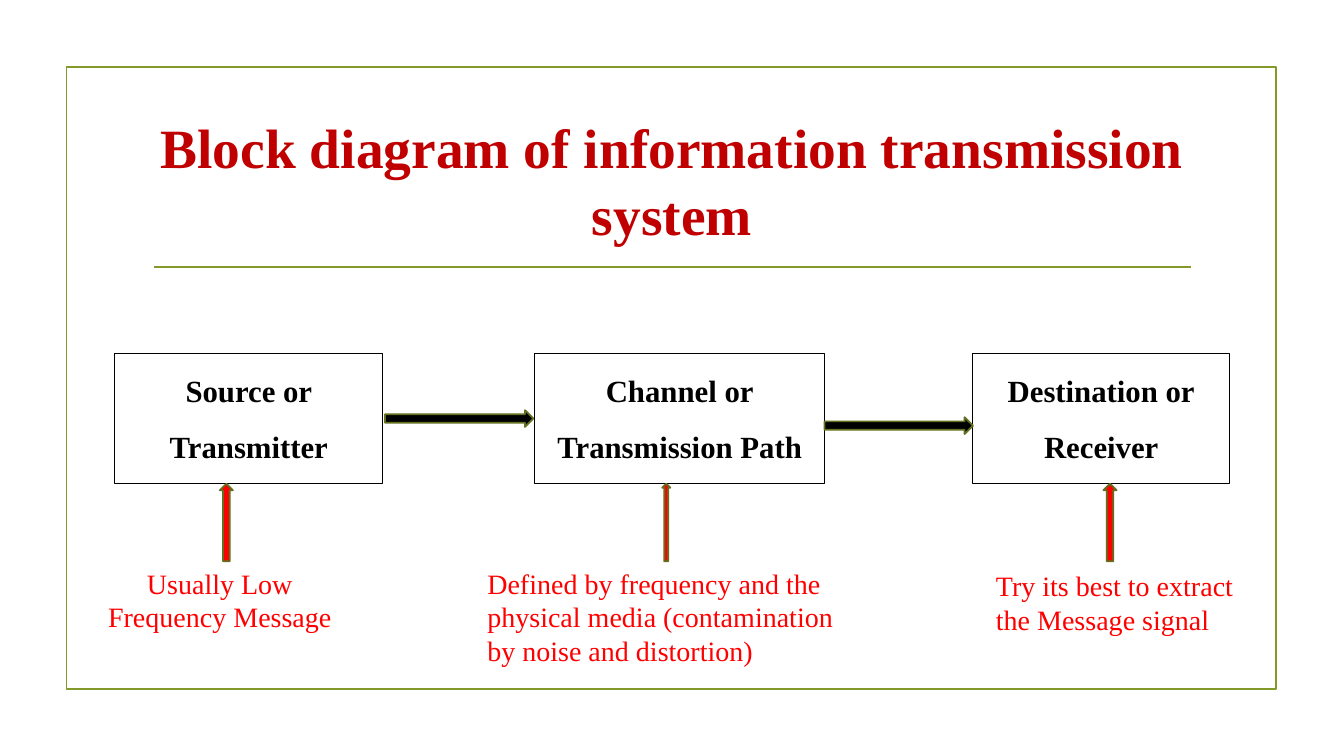
from dataclasses import dataclass

import pptx
import pptx.dml.color
import pptx.enum.shapes
import pptx.enum.text
import pptx.oxml
import pptx.oxml.ns
import pptx.util

Pt = pptx.util.Pt
Shapes = pptx.enum.shapes.MSO_SHAPE
Align = pptx.enum.text.PP_ALIGN
Anchor = pptx.enum.text.MSO_ANCHOR


@dataclass(frozen=True)
class Theme:
    font: str = "Times New Roman"
    title: str = "C00000"
    frame: str = "83992A"
    arrow_edge: str = "61711F"
    ink: str = "000000"
    accent: str = "FF0000"
    title_size: float = 39.6
    block_size: float = 22
    note_size: float = 20
    rule: float = 1.25
    thin: float = 0.5


@dataclass(frozen=True)
class Area:
    left: float
    top: float
    width: float
    height: float

    def lengths(self) -> tuple:
        return Pt(self.left), Pt(self.top), Pt(self.width), Pt(self.height)


@dataclass(frozen=True)
class Block:
    left: float
    width: float
    lines: tuple[str, str]


@dataclass(frozen=True)
class Arrow:
    preset: Shapes
    area: Area
    fill: str


@dataclass(frozen=True)
class Note:
    area: Area
    text: str
    align: Align = Align.LEFT
    inset_left: float = 7.2
    inset_right: float = 7.2


THEME = Theme()
BLOCK_TOP, BLOCK_HEIGHT = 252.5, 93
UP_TOP, UP_HEIGHT = BLOCK_TOP + BLOCK_HEIGHT, 55.5

FRAME = Area(47.5, 48, 864, 444)
TITLE = Area(102, 77, 756, 103)

BLOCKS = [
    Block(82, 191.5, ("Source or", "Transmitter")),
    Block(382, 207, ("Channel or", "Transmission Path")),
    Block(694.8, 183.6, ("Destination or", "Receiver")),
]

ARROWS = [
    Arrow(Shapes.RIGHT_ARROW, Area(275, 293, 106, 12), THEME.ink),
    Arrow(Shapes.RIGHT_ARROW, Area(589, 298, 106, 12), THEME.ink),
    Arrow(Shapes.UP_ARROW, Area(157, UP_TOP, 9.4, UP_HEIGHT), THEME.accent),
    Arrow(Shapes.UP_ARROW, Area(473, UP_TOP, 5.8, UP_HEIGHT), THEME.accent),
    Arrow(Shapes.UP_ARROW, Area(788.2, UP_TOP, 9.4, UP_HEIGHT), THEME.accent),
]

NOTES = [
    Note(Area(61, 401, 192, 78), "Usually Low Frequency Message", Align.CENTER),
    Note(
        Area(341, 401, 264, 80),
        "Defined by frequency and the physical media "
        "(contamination by noise and distortion)",
    ),
    Note(
        Area(694.8, 402.5, 236, 55.5),
        "Try its best to extract the Message signal",
        inset_left=16.6,
        inset_right=36,
    ),
]


def color(code: str) -> pptx.dml.color.RGBColor:
    return pptx.dml.color.RGBColor.from_string(code)


def add_span(para, text: str, size: float, code: str, bold: bool = False) -> None:
    span = para.add_run()
    span.text = text
    span.font.name = THEME.font
    span.font.size = Pt(size)
    span.font.bold = bold
    span.font.color.rgb = color(code)


def add_outline(page, preset: Shapes, area: Area, edge: str, weight: float, fill: str | None = None):
    """Add a preset shape, hollow unless a fill is given."""
    shape = page.shapes.add_shape(preset, *area.lengths())
    shape.shadow.inherit = False
    if fill:
        shape.fill.solid()
        shape.fill.fore_color.rgb = color(fill)
    else:
        shape.fill.background()
    shape.line.color.rgb = color(edge)
    shape.line.width = Pt(weight)
    return shape


def add_divider(page) -> None:
    line = page.shapes.add_connector(
        pptx.enum.shapes.MSO_CONNECTOR.STRAIGHT, Pt(110), Pt(190.8), Pt(850.5), Pt(190.8)
    )
    line.line.color.rgb = color(THEME.frame)
    line.line.width = Pt(THEME.rule)
    properties = line.element.find(pptx.oxml.ns.qn("p:spPr"))
    properties.append(pptx.oxml.parse_xml(f"<a:effectLst {pptx.oxml.ns.nsdecls('a')}/>"))


def fill_title(page) -> None:
    title = page.shapes.title
    title.left, title.top, title.width, title.height = TITLE.lengths()
    frame = title.text_frame
    frame.word_wrap = True
    frame.auto_size = pptx.enum.text.MSO_AUTO_SIZE.NONE
    frame.vertical_anchor = Anchor.MIDDLE
    para = frame.paragraphs[0]
    para.alignment = Align.CENTER
    text = "Block diagram of information transmission system"
    add_span(para, text, THEME.title_size, THEME.title, bold=True)


def add_block(page, block: Block) -> None:
    area = Area(block.left, BLOCK_TOP, block.width, BLOCK_HEIGHT)
    box = add_outline(page, Shapes.RECTANGLE, area, THEME.ink, THEME.thin)
    frame = box.text_frame
    frame.word_wrap = True
    frame.vertical_anchor = Anchor.TOP
    frame.margin_left = frame.margin_right = frame.margin_top = frame.margin_bottom = 0
    for index, text in enumerate(block.lines):
        para = frame.add_paragraph() if index else frame.paragraphs[0]
        para.alignment = Align.CENTER
        para.line_spacing = 1.5
        add_span(para, text, THEME.block_size, THEME.ink, bold=True)


def add_note(page, note: Note) -> None:
    frame = page.shapes.add_textbox(*note.area.lengths()).text_frame
    frame.word_wrap = True
    frame.margin_left = Pt(note.inset_left)
    frame.margin_right = Pt(note.inset_right)
    para = frame.paragraphs[0]
    para.alignment = note.align
    add_span(para, note.text, THEME.note_size, THEME.accent)


def main() -> None:
    deck = pptx.Presentation()
    deck.slide_width, deck.slide_height = Pt(960), Pt(540)
    page = deck.slides.add_slide(deck.slide_layouts[5])
    add_outline(page, Shapes.RECTANGLE, FRAME, THEME.frame, THEME.rule)
    add_divider(page)
    fill_title(page)
    for block in BLOCKS:
        add_block(page, block)
    for arrow in ARROWS:
        add_outline(page, arrow.preset, arrow.area, THEME.arrow_edge, THEME.rule, arrow.fill)
    for note in NOTES:
        add_note(page, note)
    deck.save("out.pptx")


if __name__ == "__main__":
    main()
